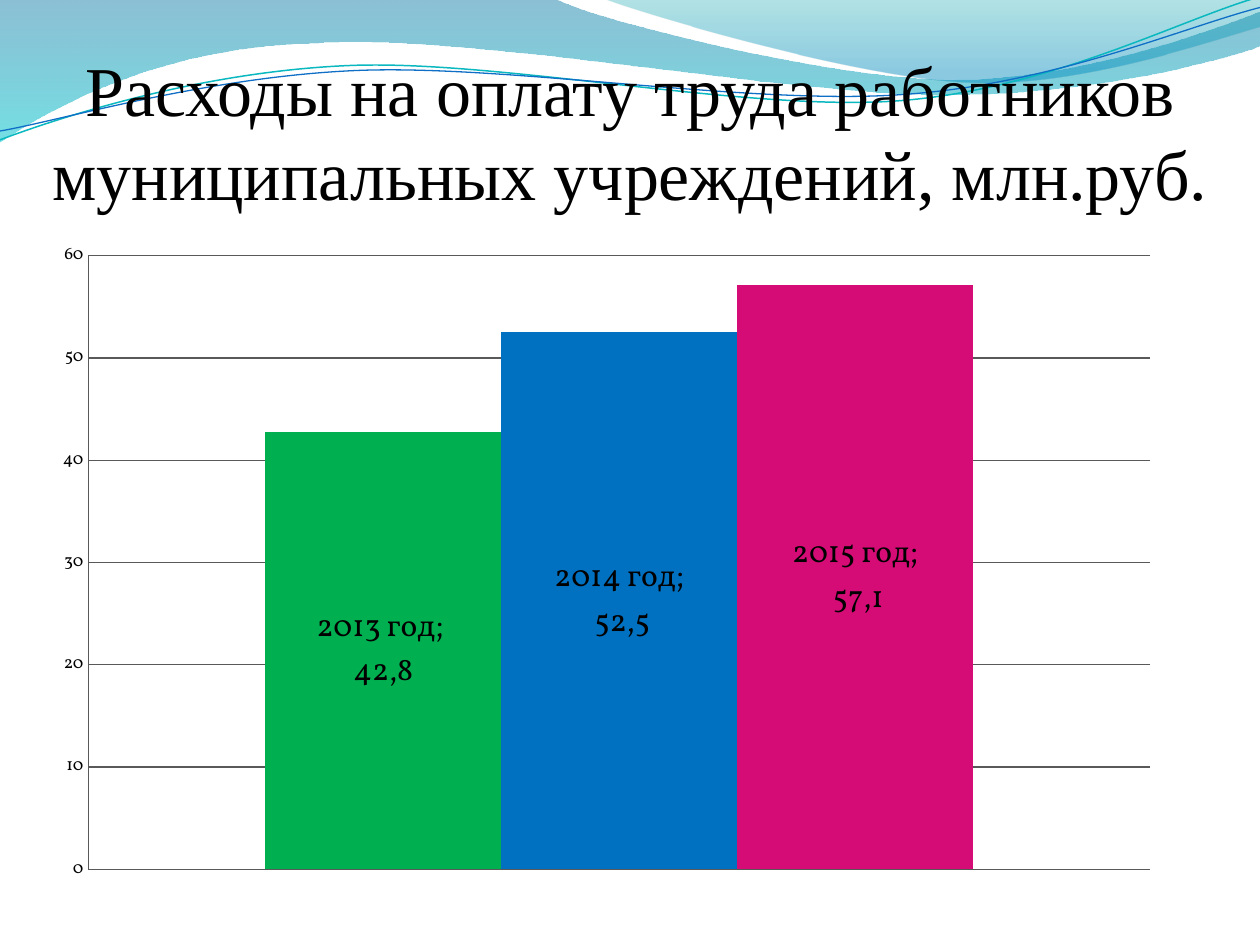
from dataclasses import dataclass
from math import cos, radians, sin

from lxml.etree import SubElement
from pptx import Presentation
from pptx.chart.data import CategoryChartData
from pptx.dml.color import RGBColor
from pptx.enum.chart import XL_CHART_TYPE, XL_LABEL_POSITION, XL_TICK_MARK
from pptx.enum.text import MSO_ANCHOR, MSO_AUTO_SIZE, PP_ALIGN
from pptx.oxml import parse_xml
from pptx.oxml.ns import nsdecls, qn
from pptx.util import Inches, Pt


@dataclass(frozen=True)
class Theme:
    ink: str = "000000"
    rule: str = "595959"
    title_face: str = "Times New Roman"
    chart_face: str = "Vollkorn"
    title_size: int = 40
    label_size: int = 18
    axis_size: int = 10


THEME = Theme()
WIDTH, HEIGHT = 10, 7.5
HEADING = "Расходы на оплату труда работников муниципальных учреждений, млн.руб."
YEARS = [
    ("2013 год", 42.8, "00B050", "2013 год; \n42,8"),
    ("2014 год", 52.5, "0070C0", "2014 год;\n 52,5"),
    ("2015 год", 57.1, "D60C76", "2015 год;\n 57,1"),
]
TITLE_AREA = (0, 0, WIDTH, 1.7)
CHART_AREA = (0.2, 1.86, 9.53, 5.35)
PLOT_AREA = (0.5, 0.17, 8.43, 4.87)
TILT = 2.7

# fmt: off
RIBBONS = [
    {"start": (0, 0),
     "parts": [(4.4, -0.01),
               (4.76, 0.17, 6.64, 0.63, 7.58, 0.63), (8.53, 0.63, 9.58, 0.26, 10, 0.09),
               (10.01, 0.36),
               (9.83, 0.44, 8.7, 0.76, 7.46, 0.75), (6.22, 0.75, 3.82, 0.28, 2.57, 0.34),
               (1.29, 0.36, 0.46, 0.83, -0.01, 1.13), (0, 0)],
     "stops": [(0, "0074A1", 45), (1, "00C6CF", 55)]},
    {"start": (4.79, -0.01),
     "parts": [(5.09, 0.11, 6.82, 0.62, 7.69, 0.65), (8.56, 0.69, 9.61, 0.32, 10, 0.21),
               (10, 0), (4.79, -0.01)],
     "stops": [(0, "00A1A9", 30), (0.8, "008BBF", 45)]},
]
STRANDS = [
    {"start": (0, 1.11), "center": (4.99, 0.57),
     "parts": [(0.48, 0.93, 1.58, 0.57, 2.77, 0.52), (3.95, 0.47, 5.93, 0.89, 7.13, 0.8),
               (8.33, 0.71, 9.38, 0.15, 9.98, -0.02)],
     "stroke": ("0AB8BF", 0.85)},
    {"start": (0, 1.04), "center": (5, 0.59),
     "parts": [(0.47, 0.96, 1.64, 0.61, 2.83, 0.56), (4.03, 0.51, 5.97, 0.84, 7.17, 0.75),
               (8.36, 0.67, 9.41, 0.21, 10, 0.06)],
     "stroke": ("0F6FC6", 0.75)},
]
# fmt: on


def color(value):
    return RGBColor.from_string(value)


def style(font, *, size, face):
    font.size, font.name = Pt(size), face
    font.color.rgb = color(THEME.ink)


def write(frame, text, *, size, face, align=PP_ALIGN.CENTER):
    frame.text = text
    for paragraph in frame.paragraphs:
        paragraph.alignment = align
        for run in paragraph.runs:
            style(run.font, size=size, face=face)


def turn(point, center, degrees):
    dx, dy = point[0] - center[0], point[1] - center[1]
    c, s = cos(radians(degrees)), sin(radians(degrees))
    return center[0] + dx * c - dy * s, center[1] + dx * s + dy * c


def bend(wave, parts):
    segments = iter(wave._element.spPr.findall(".//" + qn("a:lnTo")))
    for part in parts:
        segment = next(segments)
        if len(part) == 2:
            continue
        segment.tag = qn("a:cubicBezTo")
        for _ in range(2):
            extra = next(segments)
            segment.append(extra[0])
            extra.getparent().remove(extra)


def add_wave(slide, *, start, parts, center=None, stops=None, stroke=None):
    points = [start] + [part[i:i + 2] for part in parts for i in range(0, len(part), 2)]
    if center:
        points = [turn(point, center, TILT) for point in points]
    first, *rest = [(Inches(x), Inches(y)) for x, y in points]
    builder = slide.shapes.build_freeform(*first, scale=1.0)
    builder.add_line_segments(rest, close=bool(stops))
    wave = builder.convert_to_shape()
    bend(wave, parts)
    wave.shadow.inherit = False
    if stroke:
        wave.rotation = 360 - TILT
        wave.fill.background()
        wave.line.color.rgb = color(stroke[0])
        wave.line.width = Pt(stroke[1])
        return wave
    wave.line.fill.background()
    wave.fill.gradient()
    wave.fill.gradient_angle = 270
    for stop, (position, shade, _) in zip(wave.fill.gradient_stops, stops):
        stop.position = position
        stop.color.rgb = color(shade)
    shades = wave._element.spPr.find(qn("a:gradFill")).iter(qn("a:srgbClr"))
    for shade, (_, _, opacity) in zip(shades, stops):
        SubElement(shade, qn("a:alpha")).set("val", str(opacity * 1000))
    return wave


def decorate_master(deck, slide):
    ribbons = [add_wave(slide, **ribbon) for ribbon in RIBBONS]
    strands = slide.shapes.add_group_shape([add_wave(slide, **strand) for strand in STRANDS])
    tree = deck.slide_master.shapes._spTree
    for position, backdrop in enumerate([*ribbons, strands], start=2):
        tree.insert(position, backdrop._element)
    for number, identity in enumerate(tree.iter(qn("p:cNvPr")), start=1):
        identity.set("id", str(number))


def add_title(slide):
    title = slide.shapes.title
    title.left, title.top, title.width, title.height = map(Inches, TITLE_AREA)
    frame = title.text_frame
    write(frame, HEADING, size=THEME.title_size, face=THEME.title_face)
    frame.word_wrap = True
    frame.auto_size = MSO_AUTO_SIZE.NONE
    frame.vertical_anchor = MSO_ANCHOR.BOTTOM
    frame.margin_left = frame.margin_right = frame.margin_bottom = 0


def label_column(series, caption):
    labels = series.data_labels
    labels.show_value = labels.show_series_name = True
    labels.position = XL_LABEL_POSITION.CENTER
    style(labels.font, size=THEME.label_size, face=THEME.chart_face)
    label = series.points[0].data_label
    write(label.text_frame, caption, size=THEME.label_size, face=THEME.chart_face)
    label.position = XL_LABEL_POSITION.CENTER
    for flag in series._element.iter(qn("c:showSerName")):
        flag.set("val", "1")


def fix_plot_area(chart):
    plot_area = chart._chartSpace.chart.plotArea
    for layout in plot_area.findall(qn("c:layout")):
        plot_area.remove(layout)
    modes = '<c:layoutTarget val="inner"/><c:xMode val="edge"/><c:yMode val="edge"/>'
    sizes = "".join(
        f'<c:{side} val="{length / whole}"/>'
        for side, length, whole in zip("xywh", PLOT_AREA, CHART_AREA[2:] * 2)
    )
    plot_area.insert(0, parse_xml(
        f"<c:layout {nsdecls('c')}><c:manualLayout>{modes}{sizes}</c:manualLayout></c:layout>"
    ))


def add_spending_chart(slide):
    spending = CategoryChartData(number_format="0.0")
    spending.categories = ["1"]
    for year, amount, *_ in YEARS:
        spending.add_series(year, [amount])
    chart = slide.shapes.add_chart(
        XL_CHART_TYPE.COLUMN_CLUSTERED, *map(Inches, CHART_AREA), spending
    ).chart
    chart.has_title = chart.has_legend = False
    style(chart.font, size=THEME.axis_size, face=THEME.chart_face)
    chart.category_axis.visible = False

    amounts = chart.value_axis
    amounts.minimum_scale, amounts.maximum_scale, amounts.major_unit = 0, 60, 10
    amounts.major_tick_mark = amounts.minor_tick_mark = XL_TICK_MARK.NONE
    amounts.tick_labels.number_format = "0"
    amounts.tick_labels.number_format_is_linked = False
    amounts.has_major_gridlines = True
    for rule in (amounts.format.line, amounts.major_gridlines.format.line):
        rule.color.rgb = color(THEME.rule)
        rule.width = Pt(0.75)

    columns = chart.plots[0]
    columns.gap_width, columns.overlap, columns.vary_by_categories = 150, 0, False
    for series, (_, _, shade, caption) in zip(columns.series, YEARS):
        series.format.fill.solid()
        series.format.fill.fore_color.rgb = color(shade)
        label_column(series, caption)
    fix_plot_area(chart)


def main():
    deck = Presentation()
    deck.slide_width, deck.slide_height = Inches(WIDTH), Inches(HEIGHT)
    slide = deck.slides.add_slide(deck.slide_layouts[5])
    decorate_master(deck, slide)
    add_title(slide)
    add_spending_chart(slide)
    deck.save("out.pptx")


if __name__ == "__main__":
    main()
